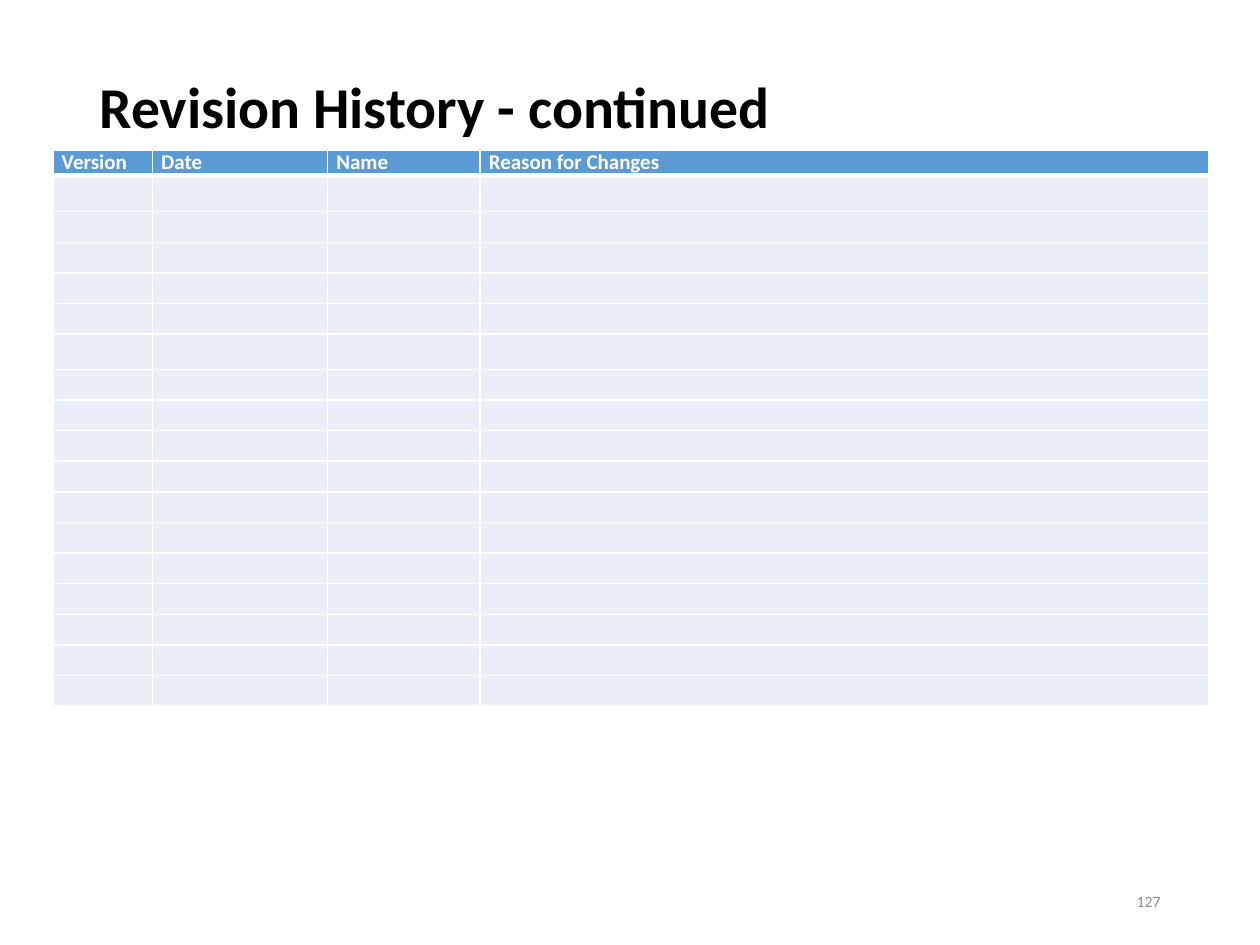
from dataclasses import dataclass

import pptx
import pptx.dml.color
import pptx.enum.text
import pptx.oxml
import pptx.oxml.ns
import pptx.util
from lxml import etree

Inches = pptx.util.Inches
Pt = pptx.util.Pt
ANCHOR = pptx.enum.text.MSO_ANCHOR
ALIGN = pptx.enum.text.PP_ALIGN


@dataclass(frozen=True)
class Theme:
    font: str = "Calibri"
    title: str = "000000"
    header_text: str = "FFFFFF"
    header_fill: str = "5B9BD5"
    body_fill: str = "EAEFF7"
    border: str = "FFFFFF"
    page_number: str = "8C8C8C"
    title_size: int = 33
    table_size: int = 12
    page_number_size: int = 9


THEME = Theme()
HEADINGS = ["Version", "Date", "Name", "Reason for Changes"]
COLUMN_WIDTHS = [0.79, 1.39, 1.21, 5.78]
ROW_COUNT = 18
HEADER_HEIGHT = 0.2
ENTRY_HEIGHT = 0.243
TALL_ENTRIES = {1: 0.29, 6: 0.28}


def rgb(value):
    return pptx.dml.color.RGBColor.from_string(value)


def apply(target, formats):
    for name, value in formats.items():
        setattr(target, name, value)


def write(paragraph, text, size, color, bold=False):
    run = paragraph.add_run()
    run.text = text
    apply(run.font, {"name": THEME.font, "size": Pt(size), "bold": bold})
    run.font.color.rgb = rgb(color)


def add_text(slide, box, text, size, color, frame_formats, paragraph_formats, bold=False):
    frame = slide.shapes.add_textbox(*map(Inches, box)).text_frame
    apply(frame, {"word_wrap": True, **frame_formats})
    paragraph = frame.paragraphs[0]
    apply(paragraph, paragraph_formats)
    write(paragraph, text, size, color, bold)


def set_borders(cell, bottom_width, top_width):
    properties = cell._tc.get_or_add_tcPr()
    for side, width in {"L": 1, "R": 1, "T": top_width, "B": bottom_width}.items():
        line = etree.SubElement(
            properties, pptx.oxml.ns.qn(f"a:ln{side}"), w=str(Pt(width)))
        fill = etree.SubElement(line, pptx.oxml.ns.qn("a:solidFill"))
        etree.SubElement(fill, pptx.oxml.ns.qn("a:srgbClr"), val=THEME.border)


def set_empty_size(cell, size):
    """Keep an empty cell's line low enough for its row."""
    paragraph = cell.text_frame.paragraphs[0]._p
    etree.SubElement(paragraph, pptx.oxml.ns.qn("a:endParaRPr"), sz=str(size * 100))


def style_cell(cell, row):
    apply(cell, {"margin_left": Inches(0.07), "margin_right": Inches(0.07),
                 "margin_top": 0, "margin_bottom": 0})
    set_borders(cell, 3 if row == 0 else 1, 3 if row == 1 else 1)
    cell.fill.solid()
    cell.fill.fore_color.rgb = rgb(THEME.body_fill if row else THEME.header_fill)


def add_revision_table(slide):
    heights = [HEADER_HEIGHT] + [
        TALL_ENTRIES.get(row, ENTRY_HEIGHT) for row in range(1, ROW_COUNT)]
    table = slide.shapes.add_table(
        ROW_COUNT, len(HEADINGS), Inches(0.42), Inches(1.19),
        Inches(sum(COLUMN_WIDTHS)), Inches(sum(heights))).table
    apply(table, {"first_row": True, "horz_banding": False})
    for column, width in zip(table.columns, COLUMN_WIDTHS):
        column.width = Inches(width)
    for row, height in enumerate(heights):
        table.rows[row].height = Inches(height)
        for column, heading in enumerate(HEADINGS):
            cell = table.cell(row, column)
            style_cell(cell, row)
            if row == 0:
                write(cell.text_frame.paragraphs[0], heading,
                      THEME.table_size, THEME.header_text, bold=True)
            else:
                set_empty_size(cell, THEME.table_size)


def main():
    deck = pptx.Presentation()
    apply(deck, {"slide_width": Inches(10), "slide_height": Inches(7.5)})
    slide = deck.slides.add_slide(deck.slide_layouts[6])
    add_text(slide, (0.69, 0.4, 8.62, 1.45), "Revision History - continued",
             THEME.title_size, THEME.title,
             {"vertical_anchor": ANCHOR.TOP, "margin_top": Inches(0.22)},
             {"line_spacing": 0.9}, bold=True)
    add_revision_table(slide)
    add_text(slide, (7.06, 6.95, 2.25, 0.4), "127",
             THEME.page_number_size, THEME.page_number,
             {"vertical_anchor": ANCHOR.MIDDLE}, {"alignment": ALIGN.RIGHT})
    deck.save("out.pptx")


if __name__ == "__main__":
    main()
